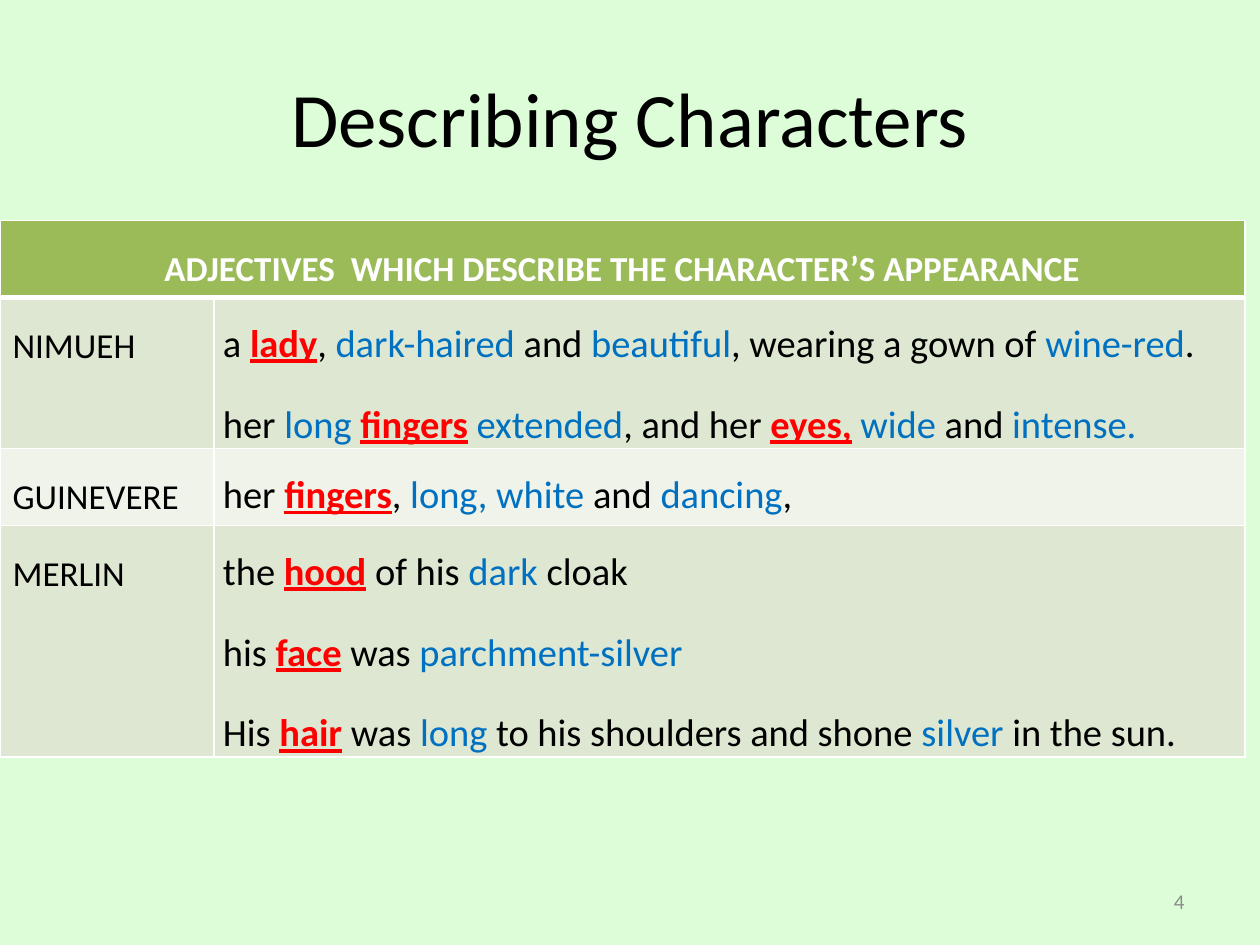
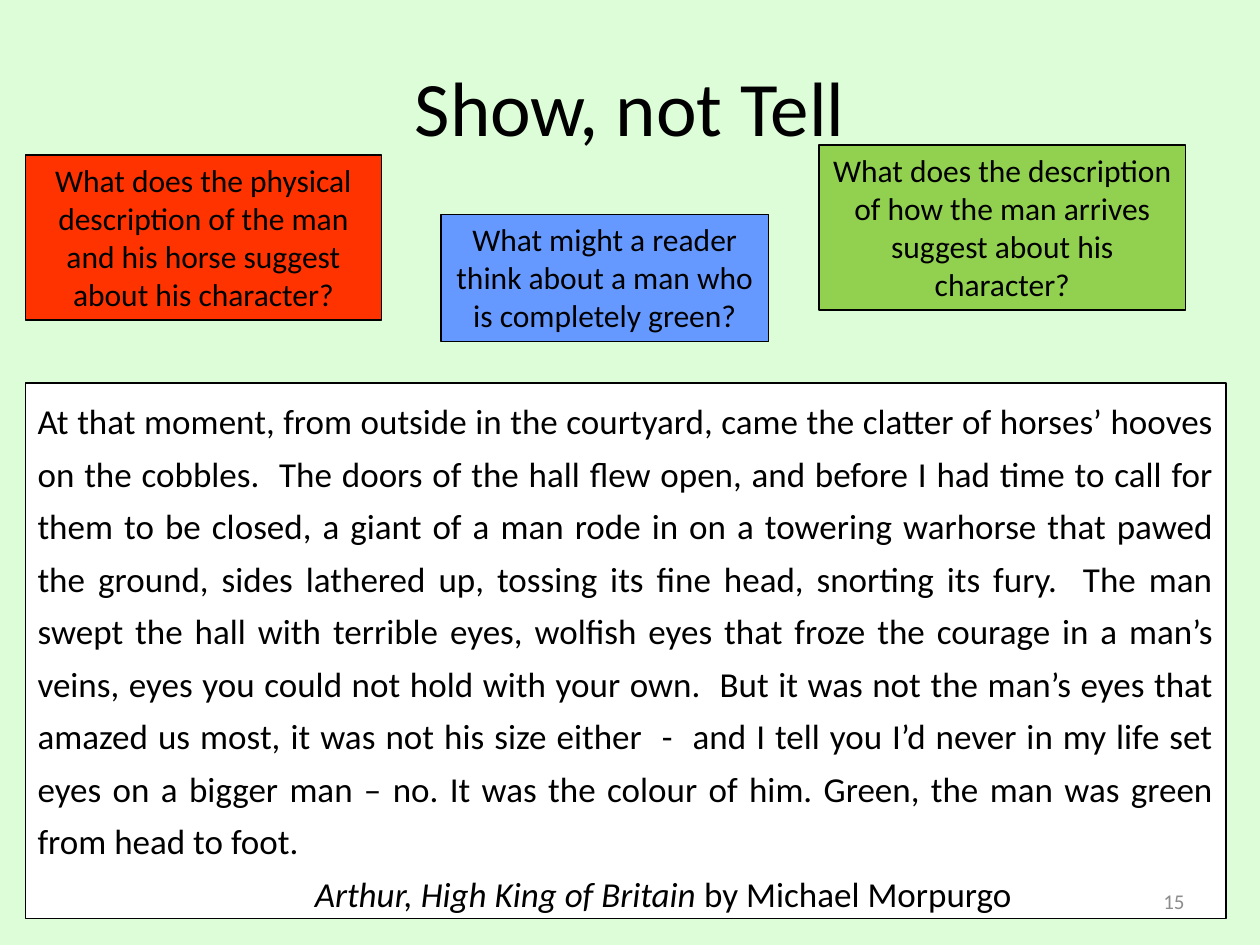
from dataclasses import dataclass
from lxml import etree
from pptx import Presentation
from pptx import util as u
from pptx.dml.color import RGBColor
from pptx.enum import shapes, text
from pptx.oxml import ns

ADJECTIVES = {
    "title": "Describing Characters",
    "title_at": (0.5, 0.3, 9, 1.25),
    "number": "4",
    "heading": "ADJECTIVES  WHICH DESCRIBE THE CHARACTER’S APPEARANCE",
    "columns": (1.7, 8.18),
    "rows": (0.61, 1.2, 0.61, 1.84),
    "characters": [
        ("NIMUEH", [
            "a |!lady|, |~dark-haired| and |~beautiful|, wearing a gown of |~wine-red|.",
            "her |~long |!fingers| |~extended|, and her |!eyes,| |~wide| and |~intense.",
        ]),
        ("GUINEVERE", ["her |!fingers|, |~long, white| and |~dancing|,"]),
        ("MERLIN", [
            "the |!hood| of his |~dark| cloak",
            "his |!face| was |~parchment-silver",
            "His |!hair| was |~long| to his shoulders and shone |~silver| in the sun.",
        ]),
    ],
}

SHOW_NOT_TELL = {
    "title": "Show, not Tell",
    "title_at": (0.5, 0.21, 9, 1.25),
    "number": "15",
    "passage_at": (0.2, 3.04, 9.53, 4.25),
    "passage": (
        "At that moment, from outside in the courtyard, came the clatter of horses’ hooves "
        "on the cobbles.  The doors of the hall flew open, and before I had time to call for "
        "them to be closed, a giant of a man rode in on a towering warhorse that pawed the "
        "ground, sides lathered up, tossing its fine head, snorting its fury.  The man swept "
        "the hall with terrible eyes, wolfish eyes that froze the courage in a man’s veins, "
        "eyes you could not hold with your own.  But it was not the man’s eyes that amazed us "
        "most, it was not his size either  -  and I tell you I’d never in my life set eyes on "
        "a bigger man – no. It was the colour of him. Green, the man was green from head to foot."
    ),
    "attribution": "/Arthur, High King of Britain |by Michael Morpurgo",
    "questions": [
        ("What does the physical description of the man and his horse suggest about "
         "his character?", (0.2, 1.23, 2.83, 1.31), "FF3300"),
        ("What does the description of how the man arrives suggest about his character?",
         (6.5, 1.15, 2.91, 1.31), "92D050"),
        ("What might a reader think about a man who is completely green?",
         (3.5, 1.7, 2.6, 1.01), "6699FF"),
    ],
}


@dataclass(frozen=True)
class Theme:
    font: str = "Calibri"
    background: str = "DCFDD7"
    ink: str = "000000"
    paper: str = "FFFFFF"
    feature: str = "FF0000"
    adjective: str = "0070C0"
    header: str = "9BBB59"
    bands: tuple = ("DEE7D1", "EFF3EA")
    footer: str = "8C8C8C"
    title_size: int = 44
    phrase_size: int = 22
    body_size: int = 20
    question_size: int = 18
    footer_size: int = 12


THEME = Theme()
MARKS = {
    "!": {"color": THEME.feature, "bold": True, "underline": True},
    "~": {"color": THEME.adjective},
    "/": {"italic": True},
}
LEFT, CENTER, RIGHT, JUSTIFY = (
    text.PP_ALIGN.LEFT, text.PP_ALIGN.CENTER, text.PP_ALIGN.RIGHT, text.PP_ALIGN.JUSTIFY)


def rgb(value):
    return RGBColor.from_string(value)


def box(at):
    return [u.Inches(n) for n in at]


def style(run, size, color=THEME.ink, bold=False, italic=False, underline=False):
    font = run.font
    font.name, font.size = THEME.font, u.Pt(size)
    font.color.rgb = rgb(color)
    font.bold, font.italic, font.underline = bold, italic, underline


def write(frame, lines, size, align, spacing=None, before=None, **look):
    frame.word_wrap = True
    for index, line in enumerate(lines):
        paragraph = frame.add_paragraph() if index else frame.paragraphs[0]
        paragraph.alignment = align
        paragraph.line_spacing = spacing
        paragraph.space_before = before
        for part in line.split("|"):
            mark = MARKS.get(part[:1])
            run = paragraph.add_run()
            run.text = part[1:] if mark else part
            style(run, size, **{**look, **(mark or {})})


def add_label(slide, words, at, size, align, **look):
    frame = slide.shapes.add_textbox(*box(at)).text_frame
    frame.vertical_anchor = text.MSO_ANCHOR.MIDDLE
    write(frame, [words], size, align, **look)


def add_panel(slide, at, fill):
    panel = slide.shapes.add_shape(shapes.MSO_SHAPE.RECTANGLE, *box(at))
    panel.shadow.inherit = False
    panel.fill.solid()
    panel.fill.fore_color.rgb = rgb(fill)
    panel.line.color.rgb = rgb(THEME.ink)
    panel.line.width = u.Pt(0.75)
    panel.text_frame.vertical_anchor = text.MSO_ANCHOR.TOP
    return panel.text_frame


def start_slide(deck, content):
    slide = deck.slides.add_slide(deck.slide_layouts[6])
    slide.background.fill.solid()
    slide.background.fill.fore_color.rgb = rgb(THEME.background)
    add_label(slide, content["title"], content["title_at"], THEME.title_size, CENTER)
    return slide


def add_number(slide, content):
    add_label(slide, content["number"], (7.17, 6.95, 2.33, 0.4),
              THEME.footer_size, RIGHT, color=THEME.footer)


def paint_cell(cell, fill, top=1, bottom=1):
    cell.fill.solid()
    cell.fill.fore_color.rgb = rgb(fill)
    properties = cell._tc.get_or_add_tcPr()
    for index, (side, width) in enumerate(zip("LRTB", (1, 1, top, bottom))):
        border = etree.Element(ns.qn(f"a:ln{side}"), w=str(u.Pt(width)))
        solid = etree.SubElement(border, ns.qn("a:solidFill"))
        etree.SubElement(solid, ns.qn("a:srgbClr"), val=THEME.paper)
        properties.insert(index, border)


def build_adjectives(deck):
    content = ADJECTIVES
    slide = start_slide(deck, content)
    widths, heights = content["columns"], content["rows"]
    grid = slide.shapes.add_table(
        len(heights), len(widths), *box((0, 1.75, sum(widths), sum(heights)))).table
    for column, width in zip(grid.columns, widths):
        column.width = u.Inches(width)
    for row, height in zip(grid.rows, heights):
        row.height = u.Inches(height)
    spacing = {"spacing": 1.5, "before": u.Pt(6)}

    heading = grid.cell(0, 0)
    heading.merge(grid.cell(0, 1))
    for column in range(len(widths)):
        paint_cell(grid.cell(0, column), THEME.header, bottom=3)
    write(heading.text_frame, [content["heading"]], THEME.body_size, CENTER,
          color=THEME.paper, bold=True, **spacing)

    for row, (character, phrases) in enumerate(content["characters"], 1):
        name, description = grid.cell(row, 0), grid.cell(row, 1)
        for cell in (name, description):
            paint_cell(cell, THEME.bands[(row - 1) % 2], top=3 if row == 1 else 1)
        description.margin_left = description.margin_right = u.Inches(0.07)
        description.margin_top = description.margin_bottom = 0
        write(name.text_frame, [character], THEME.body_size, LEFT, **spacing)
        write(description.text_frame, phrases, THEME.phrase_size, JUSTIFY, **spacing)
    add_number(slide, content)


def build_show_not_tell(deck):
    content = SHOW_NOT_TELL
    slide = start_slide(deck, content)
    passage = add_panel(slide, content["passage_at"], THEME.paper)
    write(passage, [content["passage"], content["attribution"]],
          THEME.body_size, JUSTIFY, spacing=u.Pt(30))
    attribution = passage.paragraphs[-1]
    attribution.alignment = LEFT
    attribution._p.get_or_add_pPr().set("marL", str(u.Inches(2.2)))
    for question, at, fill in content["questions"]:
        write(add_panel(slide, at, fill), [question], THEME.question_size, CENTER)
    add_number(slide, content)


def main():
    deck = Presentation()
    deck.slide_width, deck.slide_height = u.Inches(10), u.Inches(7.5)
    build_adjectives(deck)
    build_show_not_tell(deck)
    deck.save("out.pptx")


if __name__ == "__main__":
    main()
